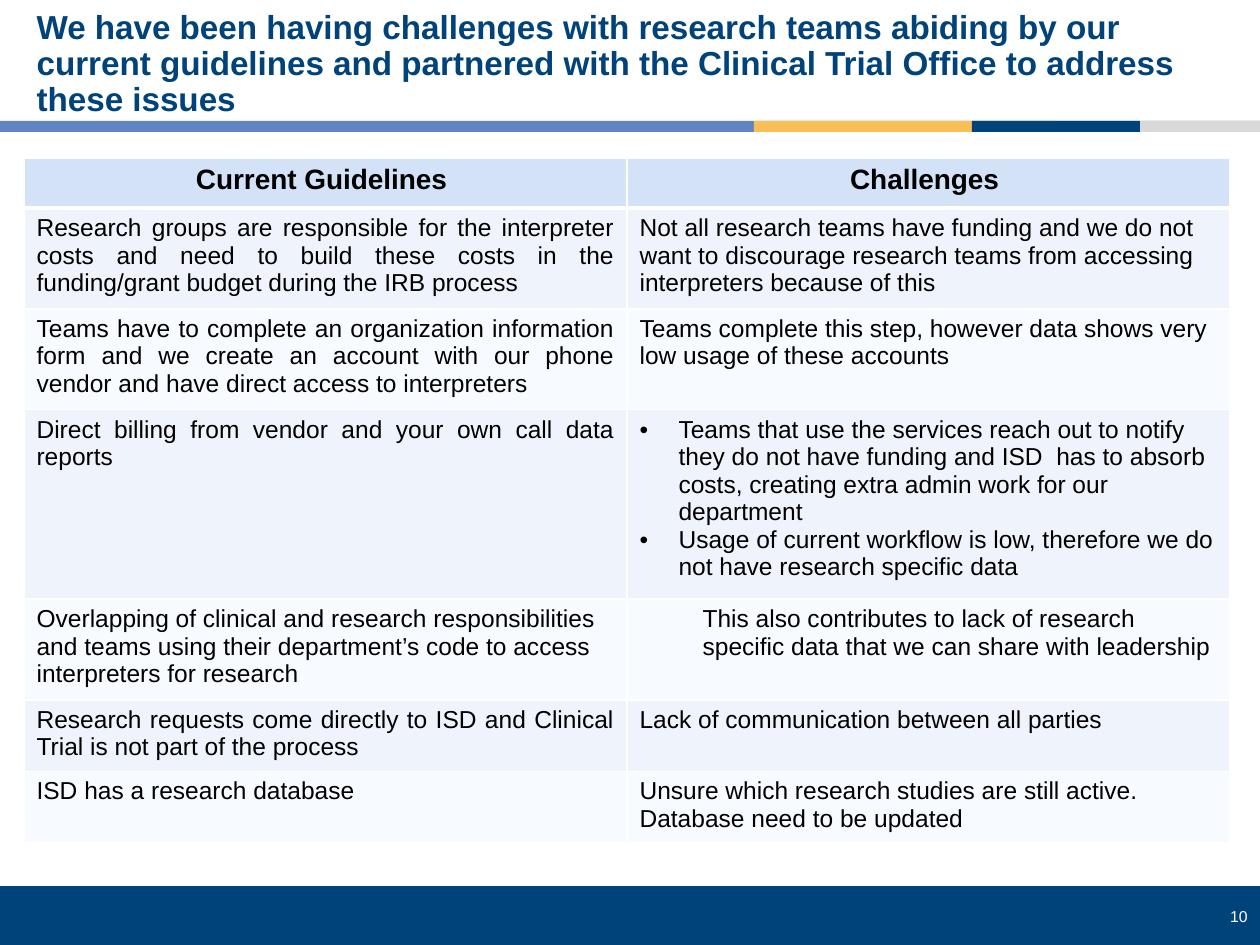
from lxml import etree
from pptx import Presentation
from pptx import util as u
from pptx.dml.color import RGBColor
from pptx.enum import shapes, text
from pptx.oxml import ns

NAVY = RGBColor(0x00, 0x43, 0x7B)
BLUE = RGBColor(0x62, 0x83, 0xC2)
GOLD = RGBColor(0xF8, 0xBF, 0x56)
GREY = RGBColor(0xD9, 0xD9, 0xD9)
WHITE = RGBColor(0xFF, 0xFF, 0xFF)
BLACK = RGBColor(0x00, 0x00, 0x00)
HEADER_FILL = RGBColor(0xD4, 0xE2, 0xF8)
BAND_FILLS = (RGBColor(0xEF, 0xF4, 0xFC), RGBColor(0xF7, 0xFA, 0xFE))

LEFT, CENTER, RIGHT, JUSTIFY = (
    text.PP_ALIGN.LEFT, text.PP_ALIGN.CENTER, text.PP_ALIGN.RIGHT, text.PP_ALIGN.JUSTIFY)

TITLE = ("We have been having challenges with research teams abiding by our current guidelines "
         "and partnered with the Clinical Trial Office to address these issues")
HEADERS = ("Current Guidelines ", "Challenges ")
ROWS = [
    ("Research groups are responsible for the interpreter costs and need to build these "
     "costs in the funding/grant budget during the IRB process",
     "Not all research teams have funding and we do not want to discourage research teams "
     "from accessing interpreters because of this"),
    ("Teams have to complete an organization information form and we create an account with "
     "our phone vendor and have direct access to interpreters",
     "Teams complete this step, however data shows very low usage of these accounts"),
    ("Direct billing from vendor and your own call data reports",
     "Teams that use the services reach out to notify they do not have funding and ISD  has to "
     "absorb costs, creating extra admin work for our department\n"
     "Usage of current workflow is low, therefore we do not have research specific data"),
    ("Overlapping of clinical and research responsibilities and teams using their "
     "department’s code to access interpreters for research",
     "This also contributes to lack of research specific data that we can share with leadership"),
    ("Research requests come directly to ISD and Clinical Trial is not part of the process ",
     "Lack of communication between all parties"),
    ("ISD has a research database ",
     "Unsure which research studies are still active. Database need to be updated"),
]
ROW_HEIGHTS = (50, 96, 95, 178, 95, 68, 67)
BULLET_ROW, OVERLAP_ROW = 3, 4


def px(length):
    """Turn pixels into EMU."""
    return u.Emu(round(length * 914400 / 126))


def style(para, size, color, bold=False, align=LEFT):
    """Format one paragraph."""
    para.alignment = align
    para.font.name = "Arial"
    para.font.size = u.Pt(size)
    para.font.bold = bold
    para.font.color.rgb = color


def indent(para, margin, bullet=False):
    """Indent a paragraph, with a hanging bullet if asked."""
    props = para._p.get_or_add_pPr()
    props.set("marL", str(px(margin)))
    props.set("indent", str(-px(margin) if bullet else 0))
    if bullet:
        etree.SubElement(props, ns.qn("a:buFont"), typeface="Arial")
        etree.SubElement(props, ns.qn("a:buChar"), char="•")


def add_bar(page, left, top, width, height, color):
    """Add a plain filled rectangle."""
    bar = page.shapes.add_shape(
        shapes.MSO_SHAPE.RECTANGLE, px(left), px(top), px(width), px(height))
    bar.shadow.inherit = False
    bar.fill.solid()
    bar.fill.fore_color.rgb = color
    bar.line.fill.background()


def add_page_number(page, number):
    """Add the page number in the footer."""
    box = page.shapes.add_textbox(px(1173), px(901), px(87), px(31))
    box.text_frame.word_wrap = True
    box.text_frame.text = number
    style(box.text_frame.paragraphs[0], 9, WHITE, align=RIGHT)


def set_title(page):
    """Place and format the title."""
    title = page.shapes.title
    title.left, title.top, title.width, title.height = px(24), px(21), px(1206), px(87)
    frame = title.text_frame
    frame.text = TITLE
    frame.word_wrap = True
    frame.auto_size = text.MSO_AUTO_SIZE.NONE
    frame.vertical_anchor = text.MSO_ANCHOR.MIDDLE
    para = frame.paragraphs[0]
    para.line_spacing = 0.9
    style(para, 19, NAVY, bold=True)


def paint_cell(cell, color, bottom=1):
    """Give a cell white borders and a fill."""
    props = cell._tc.get_or_add_tcPr()
    for side, width in (("L", 1), ("R", 1), ("T", 1), ("B", bottom)):
        line = etree.SubElement(props, ns.qn(f"a:ln{side}"), w=str(u.Pt(width)))
        fill = etree.SubElement(line, ns.qn("a:solidFill"))
        etree.SubElement(fill, ns.qn("a:srgbClr"), val=str(WHITE))
    cell.fill.solid()
    cell.fill.fore_color.rgb = color


def add_guideline_table(page):
    """Add the table of guidelines and challenges."""
    table = page.shapes.add_table(
        len(ROWS) + 1, 2, px(24), px(158), px(1206), px(sum(ROW_HEIGHTS))).table
    for row, height in zip(table.rows, ROW_HEIGHTS):
        row.height = px(height)
    for col, heading in enumerate(HEADERS):
        cell = table.cell(0, col)
        cell.text = heading
        paint_cell(cell, HEADER_FILL, bottom=3)
        style(cell.text_frame.paragraphs[0], 16, BLACK, True, CENTER)
    for row, wordings in enumerate(ROWS, 1):
        for col, wording in enumerate(wordings):
            cell = table.cell(row, col)
            cell.text = wording
            paint_cell(cell, BAND_FILLS[(row - 1) % 2])
            align = JUSTIFY if col == 0 and row != OVERLAP_ROW else LEFT
            for para in cell.text_frame.paragraphs:
                if col == 1 and row == BULLET_ROW:
                    indent(para, 39, bullet=True)
                elif col == 1 and row == OVERLAP_ROW:
                    para.level = 1
                    indent(para, 63)
                style(para, 14, BLACK, align=align)


def main():
    """Build the slide and save it."""
    deck = Presentation()
    deck.slide_width, deck.slide_height = px(1260), px(945)
    page = deck.slides.add_slide(deck.slide_layouts[5])
    add_bar(page, 0, 886, 1260, 59, NAVY)
    add_page_number(page, "10")
    for left, width, color in ((0, 1260, BLUE), (754, 302, GOLD), (972, 168, NAVY),
                               (1140, 120, GREY)):
        add_bar(page, left, 121, width, 11, color)
    set_title(page)
    add_guideline_table(page)
    deck.save("out.pptx")


if __name__ == "__main__":
    main()
